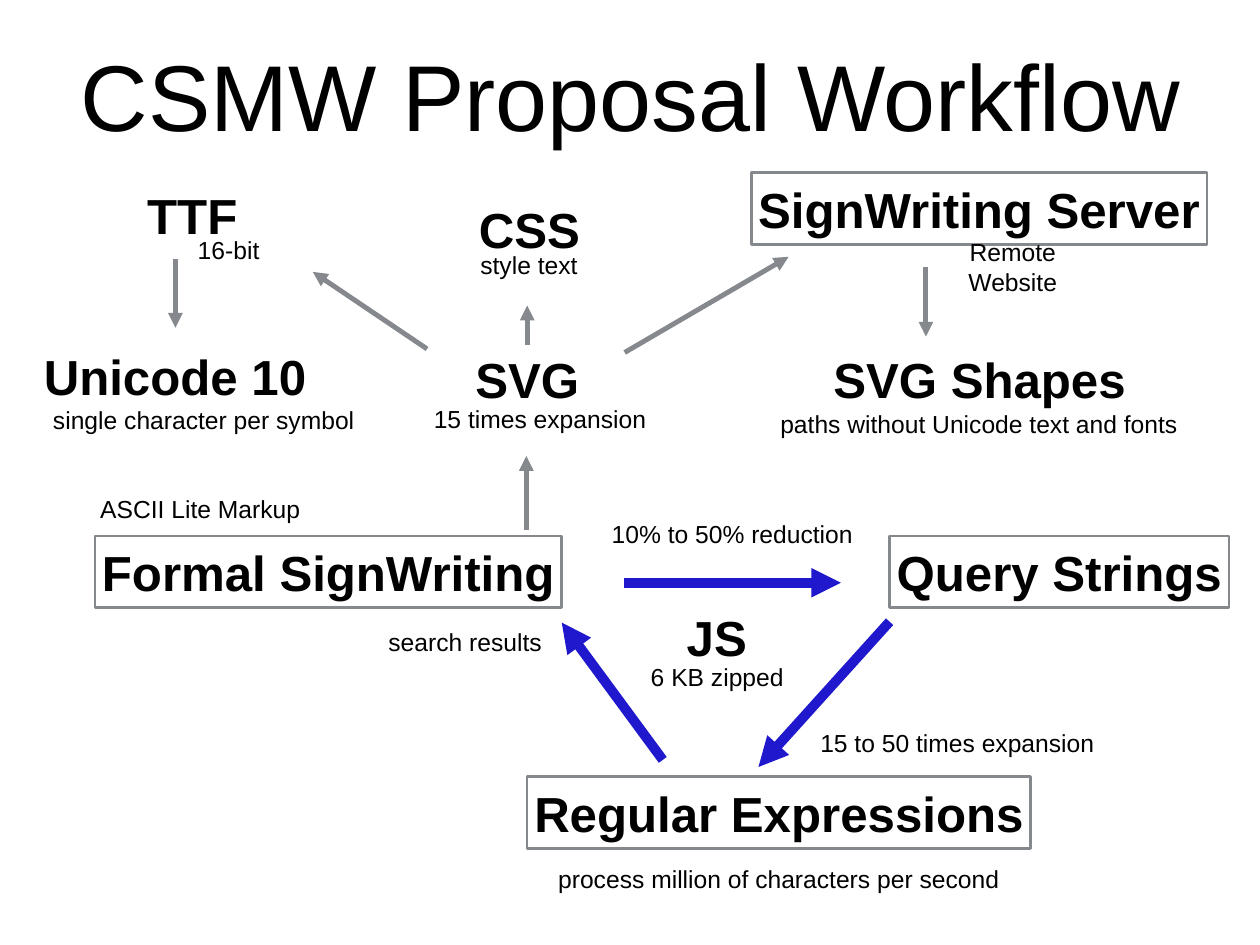
from dataclasses import dataclass
from lxml import etree
from pptx import Presentation
from pptx.dml.color import RGBColor
from pptx.enum.shapes import MSO_CONNECTOR, MSO_SHAPE
from pptx.enum.text import MSO_ANCHOR, MSO_AUTO_SIZE, PP_ALIGN
from pptx.oxml.ns import qn
from pptx.util import Inches, Pt

LINE = MSO_CONNECTOR.STRAIGHT
RECT = MSO_SHAPE.RECTANGLE
MIDDLE = MSO_ANCHOR.MIDDLE
GROW = MSO_AUTO_SIZE.SHAPE_TO_FIT_TEXT
FIXED = MSO_AUTO_SIZE.NONE
CENTER = PP_ALIGN.CENTER


@dataclass
class Theme:
    font: str = "Arial"
    ink: RGBColor = RGBColor(0, 0, 0)
    gray: RGBColor = RGBColor(0x85, 0x88, 0x8D)
    blue: RGBColor = RGBColor(0x1F, 0x18, 0xCD)
    title: int = 76
    head: int = 40
    note: int = 20
    border: int = 2
    thin: int = 4
    thick: int = 8


theme = Theme()


def write(shape, text, size, bold=False, wrap=False, fit=GROW):
    frame = shape.text_frame
    frame.text = text
    frame.word_wrap = wrap
    frame.auto_size = fit
    frame.vertical_anchor = MIDDLE
    frame.margin_left = frame.margin_right = Inches(0.06)
    frame.margin_top = frame.margin_bottom = Inches(0.06)
    para = frame.paragraphs[0]
    para.alignment = CENTER
    para.font.name = theme.font
    para.font.size = Pt(size)
    para.font.bold = bold
    para.font.color.rgb = theme.ink


deck = Presentation()
deck.slide_width = Inches(14.22)
deck.slide_height = Inches(10.67)
slide = deck.slides.add_slide(deck.slide_layouts[5])
shapes = slide.shapes

title = shapes.title
title.left, title.top = Inches(0.15), Inches(0.37)
title.width, title.height = Inches(13.93), Inches(1.38)
write(title, "CSMW Proposal Workflow", theme.title, wrap=True, fit=FIXED)

boxes = [
    ("Formal SignWriting", 1.07, 6.05, 5.27),
    ("Regular Expressions", 5.95, 8.77, 5.68),
    ("Query Strings", 10.04, 6.05, 3.83),
    ("SignWriting Server", 8.48, 1.95, 5.14),
]
for text, x, y, width in boxes:
    box = shapes.add_shape(RECT, Inches(x), Inches(y), Inches(width), Inches(0.81))
    box.shadow.inherit = False
    box.fill.background()
    box.line.color.rgb = theme.gray
    box.line.width = Pt(theme.border)
    write(box, text, theme.head, bold=True)

heads = [
    ("TTF", 1.6, 2.03, 1.14),
    ("CSS", 5.34, 2.19, 1.27),
    ("Unicode 10", 0.43, 3.85, 3.09),
    ("SVG", 5.3, 3.89, 1.3),
    ("SVG Shapes", 9.34, 3.89, 3.43),
    ("JS", 7.69, 6.8, 0.8),
]
for text, x, y, width in heads:
    label = shapes.add_textbox(Inches(x), Inches(y), Inches(width), Inches(0.78))
    write(label, text, theme.head, bold=True)

notes = [
    ("16-bit", 2.16, 2.6, 0.84),
    ("style text", 5.36, 2.77, 1.22),
    ("single character per symbol", 0.5, 4.52, 3.6),
    ("15 times expansion", 4.83, 4.51, 2.53),
    ("paths without Unicode text and fonts", 8.72, 4.56, 4.66),
    ("ASCII Lite Markup", 1.07, 5.52, 2.38),
    ("10% to 50% reduction", 6.83, 5.81, 2.87),
    ("search results", 4.32, 7.02, 1.86),
    ("6 KB zipped", 7.26, 7.42, 1.67),
    ("15 to 50 times expansion", 9.19, 8.16, 3.23),
    ("process million of characters per second", 6.19, 9.7, 5.2),
]
for text, x, y, width in notes:
    label = shapes.add_textbox(Inches(x), Inches(y), Inches(width), Inches(0.44))
    write(label, text, theme.note)

remote = shapes.add_textbox(Inches(10.83), Inches(2.62), Inches(1.2), Inches(0.78))
write(remote, "Remote Website", theme.note, wrap=True)

cycle = [
    (7.04, 6.58, 9.49, 6.58),
    (10.04, 7.02, 8.56, 8.66),
    (7.48, 8.58, 6.34, 7.03),
]
links = [
    (5.94, 5.98, 5.94, 5.15),
    (5.95, 3.9, 5.95, 3.45),
    (4.82, 3.94, 3.53, 3.07),
    (7.05, 3.98, 8.9, 2.9),
    (10.45, 3.02, 10.45, 3.8),
    (1.98, 2.93, 1.98, 3.7),
]
for group, color, weight in [
    (cycle, theme.blue, theme.thick),
    (links, theme.gray, theme.thin),
]:
    for ends in group:
        arrow = shapes.add_connector(LINE, *[Inches(end) for end in ends])
        arrow.line.color.rgb = color
        arrow.line.width = Pt(weight)
        props = arrow._element.spPr
        etree.SubElement(props.find(qn("a:ln")), qn("a:tailEnd"), type="triangle")
        etree.SubElement(props, qn("a:effectLst"))

deck.save("out.pptx")
